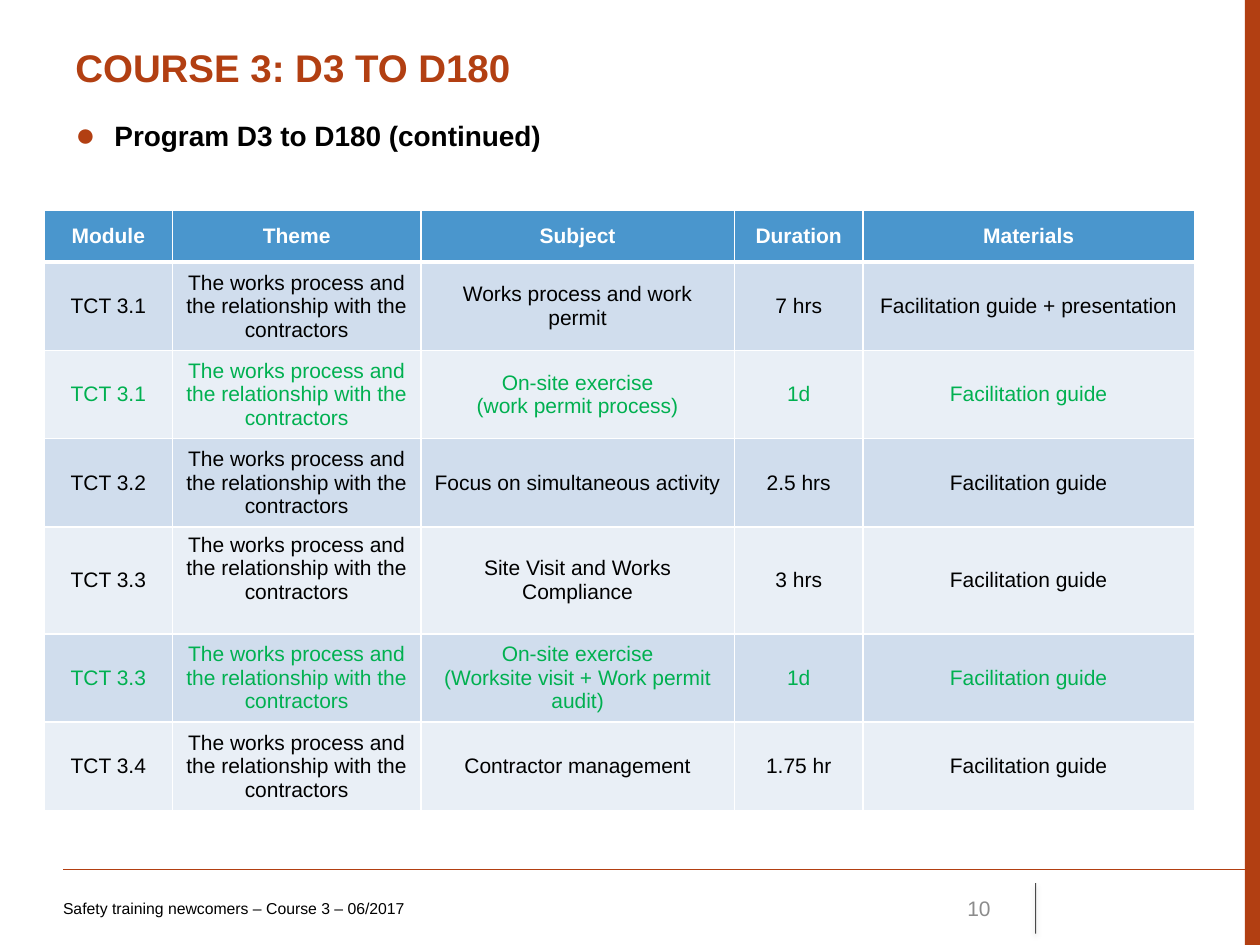
from lxml.etree import SubElement
from pptx import Presentation
from pptx.dml.color import RGBColor
from pptx.enum.shapes import MSO_CONNECTOR, MSO_SHAPE
from pptx.enum.text import MSO_ANCHOR, PP_ALIGN
from pptx.oxml.ns import qn
from pptx.util import Inches, Pt

RUST, BLACK, WHITE, GREEN, GREY = "B23F12", "000000", "FFFFFF", "00B050", "8C8C8C"
HEADER_BLUE, BANDS = "4A96CD", ("D0DDED", "E9EFF6")

COLUMN_WIDTHS = (1.02, 1.97, 2.49, 1.02, 2.63)
HEADER_HEIGHT, ROW_HEIGHT, TALL_ROW_HEIGHT = 0.41, 0.66, 0.85
TALL_ROW = 4
HEADINGS = ("Module", "Theme", "Subject", "Duration", "Materials")
THEME = "The works process and the relationship with the contractors"
GUIDE = "Facilitation guide"
MODULES = (
    ("TCT 3.1", THEME, "Works process and work permit", "7 hrs", GUIDE + " + presentation"),
    ("TCT 3.1", THEME, "On-site exercise\n(work permit process)", "1d", GUIDE),
    ("TCT 3.2", THEME, "Focus on simultaneous activity", "2.5 hrs", GUIDE),
    ("TCT 3.3", THEME, "Site Visit and Works Compliance", "3 hrs", GUIDE),
    ("TCT 3.3", THEME, "On-site exercise\n(Worksite visit + Work permit audit)", "1d", GUIDE),
    ("TCT 3.4", THEME, "Contractor management", "1.75 hr", GUIDE),
)


def rgb(color):
    return RGBColor.from_string(color)


def style_text(para, size, color, bold=False, align=PP_ALIGN.LEFT):
    para.alignment = align
    font = para.font
    font.name, font.size, font.bold = "Arial", Pt(size), bold
    font.color.rgb = rgb(color)


def add_text(page, left, top, width, height, text, anchor=MSO_ANCHOR.TOP):
    """Add a wrapping text box and return its frame."""
    box = page.shapes.add_textbox(Inches(left), Inches(top), Inches(width), Inches(height))
    frame = box.text_frame
    frame.word_wrap = True
    frame.vertical_anchor = anchor
    frame.text = text
    return frame


def add_line(page, start, end, color, weight):
    """Add a line without a shadow; return it with its empty effect list."""
    ends = [Inches(value) for value in (*start, *end)]
    line = page.shapes.add_connector(MSO_CONNECTOR.STRAIGHT, *ends)
    line.line.color.rgb = rgb(color)
    line.line.width = Pt(weight)
    effects = SubElement(line._element.spPr, qn("a:effectLst"))
    return line, effects


def add_side_bar(page, left, top, width, height):
    bar = page.shapes.add_shape(
        MSO_SHAPE.RECTANGLE, Inches(left), Inches(top), Inches(width), Inches(height))
    bar.shadow.inherit = False
    bar.fill.solid()
    bar.fill.fore_color.rgb = rgb(RUST)
    bar.line.fill.background()


def add_heading(page, left, top, width):
    title = add_text(page, left, top, width, 0.69, "COURSE 3: D3 TO D180")
    style_text(title.paragraphs[0], 22, RUST, bold=True)

    para = add_text(page, left, top + 0.59, width, 0.47,
                    "Program D3 to D180 (continued)").paragraphs[0]
    properties = para._p.get_or_add_pPr()
    properties.set("marL", str(Inches(0.31)))
    properties.set("indent", str(-Inches(0.31)))
    bullet_color = SubElement(properties, qn("a:buClr"))
    SubElement(bullet_color, qn("a:srgbClr"), val=RUST)
    SubElement(properties, qn("a:buSzPct"), val="120000")
    SubElement(properties, qn("a:buFont"), typeface="Arial")
    SubElement(properties, qn("a:buChar"), char="●")
    style_text(para, 16, BLACK, bold=True)


def set_borders(cell, bottom_weight):
    properties = cell._tc.get_or_add_tcPr()
    for side, weight in (("L", 1), ("R", 1), ("T", 1), ("B", bottom_weight)):
        border = SubElement(properties, qn("a:ln" + side), w=str(Pt(weight)))
        fill = SubElement(border, qn("a:solidFill"))
        SubElement(fill, qn("a:srgbClr"), val=WHITE)


def fill_cell(cell, text, fill, color, is_header):
    set_borders(cell, 3 if is_header else 1)
    cell.fill.solid()
    cell.fill.fore_color.rgb = rgb(fill)
    cell.vertical_anchor = MSO_ANCHOR.MIDDLE
    cell.text = text
    for para in cell.text_frame.paragraphs:
        style_text(para, 12, color, bold=is_header, align=PP_ALIGN.CENTER)


def add_program_table(page, left, top):
    rows = (HEADINGS, *MODULES)
    heights = [HEADER_HEIGHT] + [ROW_HEIGHT] * len(MODULES)
    heights[TALL_ROW] = TALL_ROW_HEIGHT
    table = page.shapes.add_table(
        len(rows), len(HEADINGS), Inches(left), Inches(top),
        Inches(sum(COLUMN_WIDTHS)), Inches(sum(heights))).table
    for column, width in zip(table.columns, COLUMN_WIDTHS):
        column.width = Inches(width)
    for index, (values, height) in enumerate(zip(rows, heights)):
        table.rows[index].height = Inches(height)
        is_header = index == 0
        is_exercise = values[2].startswith("On-site")
        fill = HEADER_BLUE if is_header else BANDS[(index - 1) % 2]
        color = WHITE if is_header else GREEN if is_exercise else BLACK
        for column, text in enumerate(values):
            fill_cell(table.cell(index, column), text, fill, color, is_header)
    table.cell(TALL_ROW, 1).vertical_anchor = MSO_ANCHOR.TOP


def add_divider(page, left, top, height):
    """Add the translucent upright line with a soft shadow below it."""
    line, effects = add_line(page, (left, top), (left, top + height), BLACK, 0.5)
    stroke_color = line.line._ln.find(".//" + qn("a:srgbClr"))
    SubElement(stroke_color, qn("a:alpha"), val="70000")
    shadow = SubElement(effects, qn("a:outerShdw"), blurRad=str(Pt(3.1)),
                        dist=str(Pt(1.6)), dir="5400000", rotWithShape="0")
    shadow_color = SubElement(shadow, qn("a:srgbClr"), val=BLACK)
    SubElement(shadow_color, qn("a:alpha"), val="38000")


def add_footer(page, left, top, right):
    add_line(page, (left, top), (right, top), RUST, 0.75)
    text_top, height = top + 0.11, 0.4
    add_divider(page, left + 7.72, text_top, height)
    number = add_text(page, left + 6.67, text_top, 0.79, height, "10", MSO_ANCHOR.MIDDLE)
    style_text(number.paragraphs[0], 12, GREY, align=PP_ALIGN.RIGHT)
    label = add_text(page, left, text_top, 6.08, height,
                     "Safety training newcomers – Course 3 – 06/2017", MSO_ANCHOR.MIDDLE)
    label.margin_left = 0
    style_text(label.paragraphs[0], 9, BLACK)


def main():
    deck = Presentation()
    deck.slide_width, deck.slide_height = Inches(10), Inches(7.5)
    page = deck.slides.add_slide(deck.slide_layouts[6])
    add_side_bar(page, 9.88, 0, 0.12, 7.5)
    add_heading(page, 0.5, 0.3, 8.99)
    add_program_table(page, 0.35, 1.67)
    add_footer(page, 0.5, 6.9, 10)
    deck.save("out.pptx")


if __name__ == "__main__":
    main()
